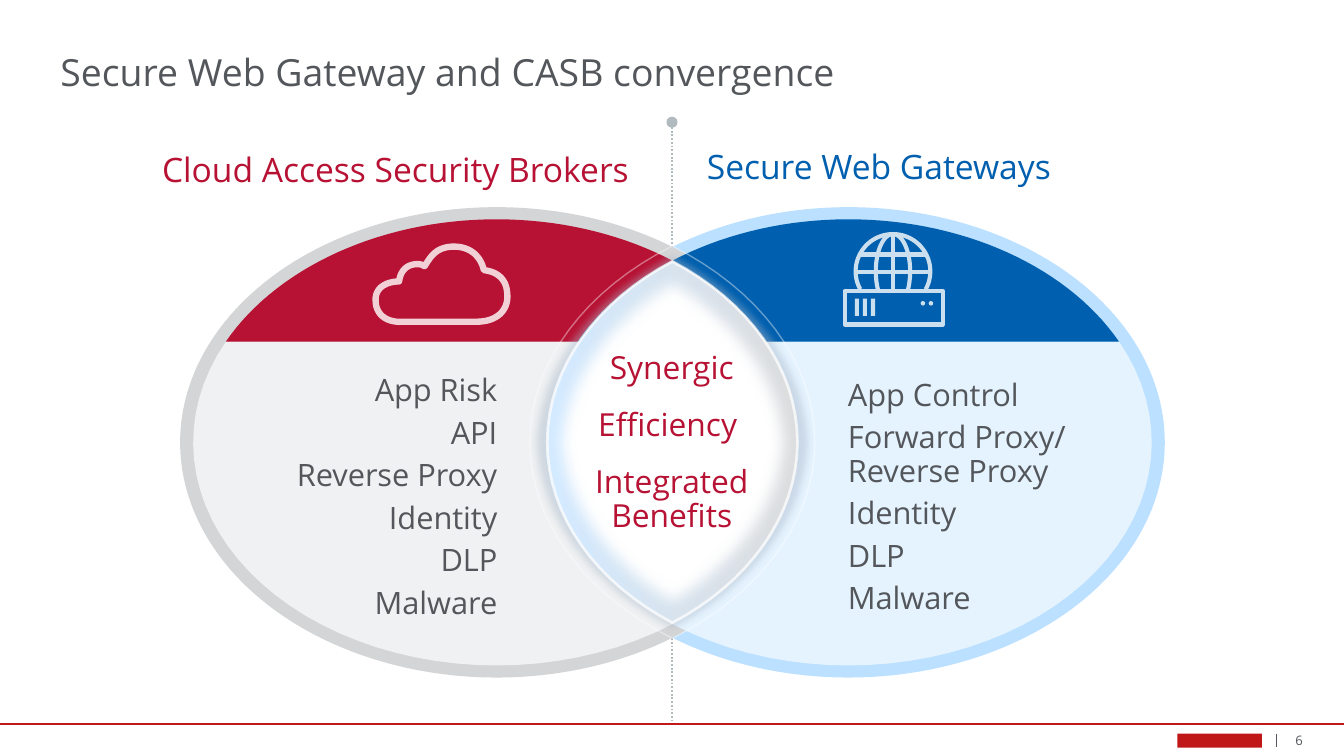
from dataclasses import dataclass
from math import asin, cos, degrees, radians, sin

from lxml import etree
from pptx import Presentation
from pptx.dml.color import RGBColor
from pptx.enum.dml import MSO_LINE
from pptx.enum.shapes import MSO_CONNECTOR, MSO_SHAPE
from pptx.enum.text import MSO_ANCHOR, PP_ALIGN
from pptx.oxml.ns import qn
from pptx.util import Pt

RECT, OVAL = MSO_SHAPE.RECTANGLE, MSO_SHAPE.OVAL
LEFT, MID, RIGHT = PP_ALIGN.LEFT, PP_ALIGN.CENTER, PP_ALIGN.RIGHT
CENTER, BOTTOM = MSO_ANCHOR.MIDDLE, MSO_ANCHOR.BOTTOM
DOTS, STRAIGHT = MSO_LINE.ROUND_DOT, MSO_CONNECTOR.STRAIGHT

WHITE = RGBColor(0xFF, 0xFF, 0xFF)
INK = RGBColor(0x53, 0x56, 0x5A)
RED = RGBColor(0xB7, 0x12, 0x34)
BLUE = RGBColor(0x00, 0x5F, 0xAE)
RULE = RGBColor(0xC0, 0x18, 0x18)
STEEL = RGBColor(0xB1, 0xBA, 0xBF)
SILVER = RGBColor(0xD4, 0xD5, 0xD6)
MIST = RGBColor(0xEF, 0xF1, 0xF2)
SKY = RGBColor(0xBC, 0xE0, 0xFF)
ICE = RGBColor(0xE5, 0xF3, 0xFF)
EDGE = RGBColor(0xE9, 0xEA, 0xEA)
SHADE = RGBColor(0xA9, 0xB8, 0xCA)
GLOW = RGBColor(0xD3, 0xEA, 0xFF)
GREY = RGBColor(0xDC, 0xDD, 0xDF)
ROSE = RGBColor(0xF1, 0xD0, 0xD6)
PALE = RGBColor(0xCC, 0xDF, 0xEF)

Point = tuple[float, float]


@dataclass
class Disc:
    x: float
    rim: RGBColor
    cap: RGBColor
    body: RGBColor


@dataclass
class Label:
    box: tuple[float, float, float, float]
    lines: list[str]
    size: float
    color: RGBColor
    align: int = LEFT
    anchor: int = CENTER
    after: float = 0
    inset: float = 0


MID_Y, CUT = 237, 183
CASB = Disc(266, SILVER, RED, MIST)
SWG = Disc(454.5, SKY, BLUE, ICE)

LABELS = [
    Label((32.4, 23, 648, 27.4), ["Secure Web Gateway and CASB convergence"],
          20, INK, anchor=BOTTOM),
    Label((36, 77, 301, 24.5), ["Cloud Access Security Brokers"],
          18, RED, RIGHT, BOTTOM),
    Label((378.7, 75.6, 269, 24.5), ["Secure Web Gateways"],
          18, BLUE, anchor=BOTTOM),
    Label((105.8, 201.8, 160.6, 130),
          ["App Risk", "API", "Reverse Proxy", "Identity", "DLP", "Malware"],
          16.5, INK, RIGHT, after=5),
    Label((454.3, 201.8, 160.6, 130),
          ["App Control", "Forward Proxy/\nReverse Proxy", "Identity", "DLP",
           "Malware"], 16.5, INK, after=5),
    Label((300.2, 177.8, 119.5, 119.5),
          ["Synergic", "Efficiency ", "Integrated Benefits"],
          17, RED, MID, after=12, inset=7.2),
    Label((694, 388.8, 17.3, 16.6), ["6"], 7, INK),
]

# Start point, then cubic curves of two handles and an end
CLOUD = [(215.3, 172.4),
         (208.8, 172.8), (201.2, 169.9), (201.2, 160.6),
         (201.2, 153.4), (208, 150.8), (213.8, 150.8),
         (214.6, 144.7), (218.2, 141.5), (223.9, 141.5),
         (225.7, 141.5), (226.4, 142.2), (227.5, 142.6),
         (231.1, 136.8), (234, 132.1), (243.7, 132.1),
         (254.2, 132.5), (258.1, 139.7), (259.2, 144.7),
         (270.7, 146.2), (271.8, 154.1), (271.8, 159.1),
         (271.8, 165.6), (267.1, 172.4), (254.9, 172.4)]


def arc(x: float, y: float, rx: float, ry: float,
        start: float, end: float) -> list[Point]:
    turns = [radians(start + (end - start) * i / 60) for i in range(61)]
    return [(x + rx * cos(t), y + ry * sin(t)) for t in turns]


def curve(knots: list[Point]) -> list[Point]:
    dots = [knots[0]]
    for i in range(0, len(knots) - 1, 3):
        for t in (n / 16 for n in range(1, 17)):
            mix = ((1 - t) ** 3, 3 * t * (1 - t) ** 2, 3 * t * t * (1 - t), t ** 3)
            dots.append(tuple(sum(m * k[axis] for m, k in zip(mix, knots[i:i + 4]))
                              for axis in (0, 1)))
    return dots


def lens(w: float, h: float) -> list[Point]:
    x, y = 360.2, 236.9
    steps = [(0, 1), (.6, .78), (1, .416), (1, 0), (1, -.416), (.6, -.78),
             (0, -1), (-.6, -.78), (-1, -.416), (-1, 0), (-1, .416),
             (-.6, .78), (0, 1)]
    return curve([(x + w * a, y + h * b) for a, b in steps])


def fade(node, share: int) -> None:
    color = node.find(qn("a:solidFill"))[0]
    etree.SubElement(color, qn("a:alpha"), val=str(share * 1000))


def style(shape, fill=None, line=None, width: float = 1):
    shape.shadow.inherit = False
    for part, color in ((shape.fill, fill), (shape.line.fill, line)):
        if color is None:
            part.background()
        else:
            part.solid()
            part.fore_color.rgb = color
    if line is not None:
        shape.line.width = Pt(width)
    return shape


def soften(shape, size: float) -> None:
    effect = shape.element.spPr.find(qn("a:effectLst"))
    etree.SubElement(effect, qn("a:softEdge"), rad=str(Pt(size)))


def form(shapes, kind: int, box: tuple, **look):
    return style(shapes.add_shape(kind, *map(Pt, box)), **look)


def trace(shapes, dots: list[Point], close: bool = True, **look):
    spots = [(Pt(x), Pt(y)) for x, y in dots]
    pen = shapes.build_freeform(*spots[0], scale=1.0)
    pen.add_line_segments(spots[1:], close=close)
    return style(pen.convert_to_shape(), **look)


def stroke(shapes, ends: tuple, color: RGBColor, width: float):
    line = shapes.add_connector(STRAIGHT, *map(Pt, ends))
    line.line.color.rgb = color
    line.line.width = Pt(width)
    etree.SubElement(line.element.spPr, qn("a:effectLst"))
    return line


def rim(shapes, disc: Disc) -> None:
    form(shapes, OVAL, (disc.x - 169.5, MID_Y - 126, 339, 252), fill=disc.rim)


def core(shapes, disc: Disc) -> None:
    rx, ry = 162.5, 119.5
    tilt = degrees(asin((MID_Y - CUT) / ry))
    for start, end, color in ((-tilt, 180 + tilt, disc.body),
                              (180 + tilt, 360 - tilt, disc.cap)):
        trace(shapes, arc(disc.x, MID_Y, rx, ry, start, end), fill=color)


def server(shapes) -> None:
    x, y, r, width = 478.4, 145.4, 20, 2.2
    for rx in (r, 9.2):
        trace(shapes, arc(x, y, rx, r, 151.4, 388.6), False, line=PALE, width=width)
    for ends in ((x, y - r, x, 155), (x - 18, 136.4, x + 18, 136.4),
                 (x - r, 145.8, x + r, 145.8)):
        stroke(shapes, ends, PALE, width)
    form(shapes, RECT, (452.5, 155.9, 52.6, 18), line=PALE, width=width)
    for i in range(3):
        form(shapes, RECT, (457.9 + 4.3 * i, 160, 2.3, 9.3), fill=PALE)
    for i in range(2):
        form(shapes, OVAL, (493.2 + 4.3 * i, 161.3, 2.4, 2.4), fill=PALE)


def overlap(shapes) -> None:
    inner, outer = lens(67, 96.8), lens(76.3, 105.1)
    veil = trace(shapes, outer, fill=SHADE)
    fade(veil.element.spPr, 45)
    soften(veil, 4)
    tint = trace(shapes, inner, fill=WHITE, line=EDGE, width=0.25)
    tint.fill.gradient()
    tint.fill.gradient_angle = 0
    for stop, color in zip(tint.fill.gradient_stops, (GLOW, GREY)):
        stop.color.rgb = color
    soften(trace(shapes, inner, fill=WHITE), 8)
    for dots, width, share in ((inner, 1.5, 70), (outer, 0.75, 40)):
        ring = trace(shapes, dots, line=WHITE, width=width)
        fade(ring.element.spPr.find(qn("a:ln")), share)


def write(shapes, label: Label) -> None:
    frame = shapes.add_textbox(*map(Pt, label.box)).text_frame
    look = {"word_wrap": True, "vertical_anchor": label.anchor,
            "margin_left": Pt(label.inset), "margin_right": Pt(label.inset),
            "margin_top": 0, "margin_bottom": 0}
    for name, value in look.items():
        setattr(frame, name, value)
    for i, line in enumerate(label.lines):
        para = frame.add_paragraph() if i else frame.paragraphs[0]
        para.text = line
        for name, value in {"alignment": label.align, "line_spacing": 0.9,
                            "space_after": Pt(label.after)}.items():
            setattr(para, name, value)
        for run in para.runs:
            for name, value in {"name": "Open Sans", "size": Pt(label.size)}.items():
                setattr(run.font, name, value)
            run.font.color.rgb = label.color


def main() -> None:
    deck = Presentation()
    deck.slide_width, deck.slide_height = Pt(720), Pt(405)
    shapes = deck.slides.add_slide(deck.slide_layouts[6]).shapes

    # Footer
    stroke(shapes, (0, 388, 720, 388), RULE, 1)
    stroke(shapes, (684, 393, 684, 400.3), INK, 0.5)
    form(shapes, RECT, (630.7, 393, 45.4, 7.5), fill=RULE)

    # Dotted axis
    axis = stroke(shapes, (360, 65.5, 360, 386.6), STEEL, 1)
    axis.line.dash_style = DOTS
    etree.SubElement(axis.element.spPr.find(qn("a:ln")), qn("a:headEnd"), type="oval")

    # Two discs with icons
    rim(shapes, SWG)
    rim(shapes, CASB)
    core(shapes, CASB)
    trace(shapes, curve(CLOUD), line=ROSE, width=3.4)
    core(shapes, SWG)
    server(shapes)

    # Shared lens and wording
    overlap(shapes)
    for label in LABELS:
        write(shapes, label)
    deck.save("out.pptx")


if __name__ == "__main__":
    main()
